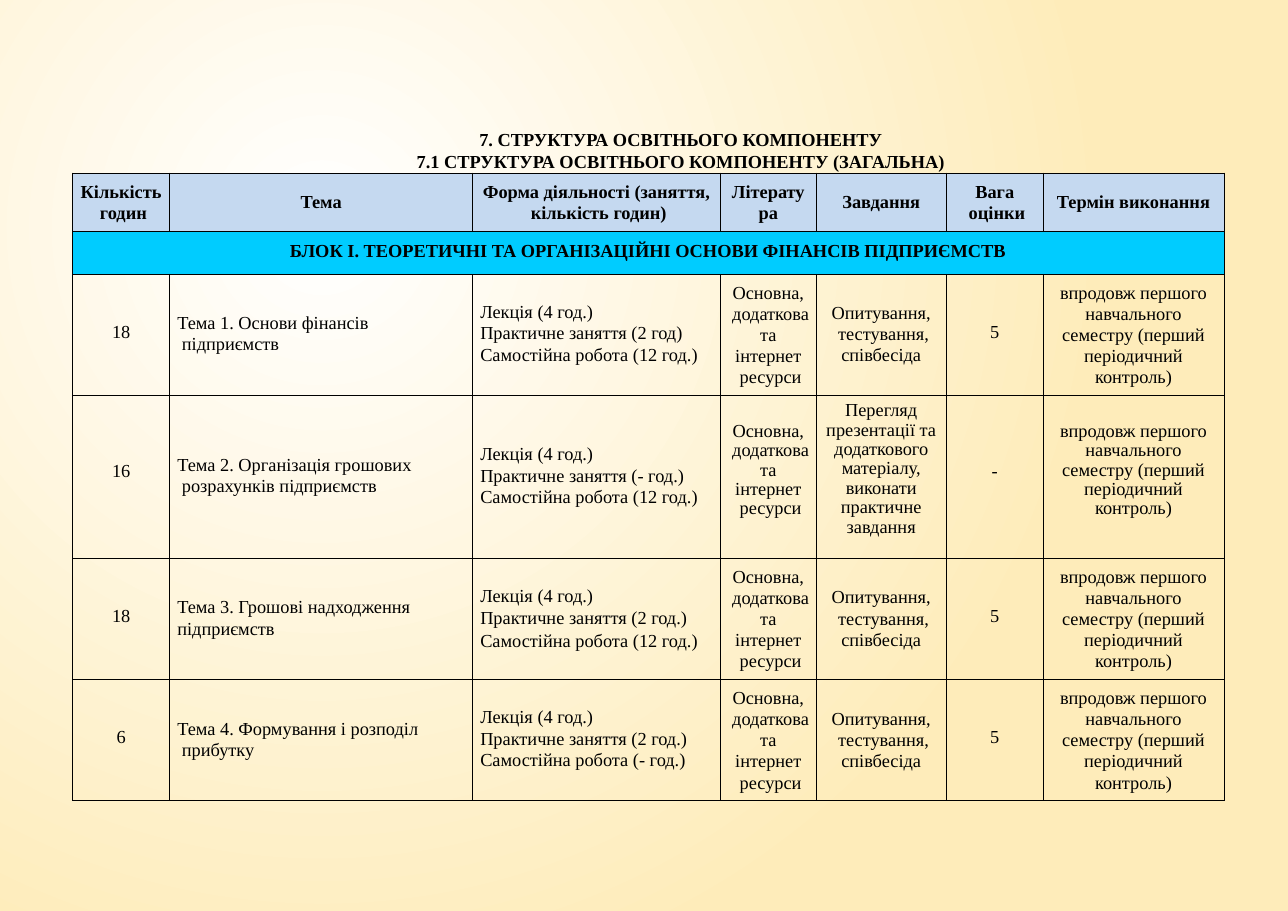
from dataclasses import dataclass

from lxml.etree import SubElement
from pptx import Presentation
from pptx.dml.color import RGBColor
from pptx.enum.text import MSO_ANCHOR as Anchor, PP_ALIGN as Align
from pptx.oxml.ns import qn
from pptx.util import Inches, Pt


@dataclass(frozen=True)
class Theme:
    font: str = "Times New Roman"
    size: float = 12
    ink: str = "000000"
    header: str = "C5D9F0"
    block: str = "00CCFF"
    glow: str = "FFFFFF"
    edge: str = "FEECBA"
    border: float = 0.5
    leading: float = 13.8
    loose: float = 14.1


@dataclass(frozen=True)
class Topic:
    hours: str
    title: str
    classes: tuple
    task: str
    weight: str
    height: float = 1.1
    leading: float = 13.8
    class_leading: float = 14.1
    lifts: tuple = (0.06, 0.02, 0.03, 0, 0.01, 0.06, 0)


THEME = Theme()
COLUMNS = (
    ("Кількість\n годин", 0.88),
    ("Тема", 2.75),
    ("Форма діяльності (заняття,\n кількість годин)", 2.25),
    ("Літерату\nра", 0.87),
    ("Завдання", 1.18),
    ("Вага\n оцінки", 0.88),
    ("Термін виконання", 1.64),
)
LEFT_COLUMNS = (1, 2)
HEADINGS = (
    "7. СТРУКТУРА ОСВІТНЬОГО КОМПОНЕНТУ",
    "7.1 СТРУКТУРА ОСВІТНЬОГО КОМПОНЕНТУ (ЗАГАЛЬНА)",
)
BLOCK = "БЛОК І. ТЕОРЕТИЧНІ ТА ОРГАНІЗАЦІЙНІ ОСНОВИ ФІНАНСІВ ПІДПРИЄМСТВ"
LITERATURE = "Основна,\n додаткова\nта\nінтернет\n ресурси"
DEADLINE = "впродовж першого\nнавчального\nсеместру (перший\nперіодичний\nконтроль)"
QUIZ = "Опитування,\n тестування,\nспівбесіда"
REVIEW = "Перегляд\nпрезентації та\nдодаткового\nматеріалу,\nвиконати\nпрактичне\nзавдання"
TOPICS = (
    Topic("18", "Тема 1. Основи фінансів\n підприємств",
          ("4 год.", "2 год", "12 год."), QUIZ, "5"),
    Topic("16", "Тема 2. Організація грошових\n розрахунків підприємств",
          ("4 год.", "- год.", "12 год."), REVIEW, "-",
          height=1.48, leading=12.7, lifts=(0.1, 0.03, 0.03, 0.12, 0.14, 0.1, 0.12)),
    Topic("18", "Тема 3. Грошові надходження\nпідприємств",
          ("4 год.", "2 год.", "12 год."), QUIZ, "5", class_leading=14.7),
    Topic("6", "Тема 4. Формування і розподіл\n прибутку",
          ("4 год.", "2 год.", "- год."), QUIZ, "5"),
)


def color(value):
    return RGBColor.from_string(value)


def write(frame, paragraphs, leading, align=Align.CENTER, bold=False):
    frame.word_wrap = True
    for index, text in enumerate(paragraphs):
        paragraph = frame.paragraphs[0] if index == 0 else frame.add_paragraph()
        paragraph.alignment = align
        paragraph.line_spacing = Pt(leading)
        for number, line in enumerate(text.split("\n")):
            if number:
                paragraph.add_line_break()
            run = paragraph.add_run()
            run.text = line
            run.font.name = THEME.font
            run.font.size = Pt(THEME.size)
            run.font.bold = bold
            run.font.color.rgb = color(THEME.ink)


def paint_background(slide):
    fill = slide.background.fill
    fill.gradient()
    for stop, value in zip(fill.gradient_stops, (THEME.glow, THEME.edge)):
        stop.color.rgb = color(value)
    gradient = slide.element.find(".//" + qn("a:gradFill"))
    gradient.remove(gradient.find(qn("a:lin")))
    circle = SubElement(gradient, qn("a:path"))
    circle.set("path", "circle")
    target = SubElement(circle, qn("a:fillToRect"))
    for side, share in zip("ltrb", (50000, 50000, 100000, 100000)):
        target.set(side, str(share))


def draw_borders(cell):
    properties = cell._tc.get_or_add_tcPr()
    for side in "LRTB":
        line = SubElement(properties, qn("a:ln" + side))
        line.set("w", str(Pt(THEME.border)))
        solid = SubElement(line, qn("a:solidFill"))
        SubElement(solid, qn("a:srgbClr")).set("val", THEME.ink)


def style_cell(cell, fill=None, left=0, lift=0):
    draw_borders(cell)
    if fill:
        cell.fill.solid()
        cell.fill.fore_color.rgb = color(fill)
    else:
        cell.fill.background()
    cell.vertical_anchor = Anchor.MIDDLE
    cell.margin_left, cell.margin_right = Inches(left), 0
    cell.margin_top, cell.margin_bottom = 0, Inches(lift)


def add_headings(slide, left, top, width, height):
    shape = slide.shapes.add_textbox(Inches(left), Inches(top), Inches(width), Inches(height))
    frame = shape.text_frame
    frame.margin_left = frame.margin_right = frame.margin_bottom = 0
    frame.margin_top = Inches(0.02)
    write(frame, HEADINGS, THEME.loose, bold=True)


def fill_topic(table, row, topic):
    kinds = ("Лекція", "Практичне заняття", "Самостійна робота")
    classes = [f"{kind} ({hours})" for kind, hours in zip(kinds, topic.classes)]
    contents = ([topic.hours], [topic.title], classes, [LITERATURE],
                [topic.task], [topic.weight], [DEADLINE])
    for column, paragraphs in enumerate(contents):
        cell = table.cell(row, column)
        is_left = column in LEFT_COLUMNS
        style_cell(cell, left=0.07 if is_left else 0, lift=topic.lifts[column])
        leading = THEME.leading if column == 1 else topic.leading
        write(cell.text_frame, paragraphs,
              topic.class_leading if column == 2 else leading,
              Align.LEFT if is_left else Align.CENTER)


def add_schedule(slide, left, top, width):
    heights = [0.53, 0.39] + [topic.height for topic in TOPICS]
    table = slide.shapes.add_table(
        len(heights), len(COLUMNS), Inches(left), Inches(top),
        Inches(width), Inches(sum(heights))).table
    table.first_row = table.horz_banding = False
    for row, height in zip(table.rows, heights):
        row.height = Inches(height)
    total = sum(share for _, share in COLUMNS)
    for index, (title, share) in enumerate(COLUMNS):
        table.columns[index].width = Inches(width * share / total)
        header = table.cell(0, index)
        style_cell(header, THEME.header)
        write(header.text_frame, [title], THEME.leading, bold=True)
        style_cell(table.cell(1, index), THEME.block, lift=0.04)
    block = table.cell(1, 0)
    block.merge(table.cell(1, len(COLUMNS) - 1))
    write(block.text_frame, [BLOCK], THEME.leading, bold=True)
    for row, topic in enumerate(TOPICS, start=2):
        fill_topic(table, row, topic)


def main():
    presentation = Presentation()
    presentation.slide_width = Inches(11.69)
    presentation.slide_height = Inches(8.27)
    slide = presentation.slides.add_slide(presentation.slide_layouts[6])
    paint_background(slide)
    add_headings(slide, 3.74, 1.15, 4.88, 0.42)
    add_schedule(slide, 0.66, 1.57, 10.45)
    presentation.save("out.pptx")


if __name__ == "__main__":
    main()
